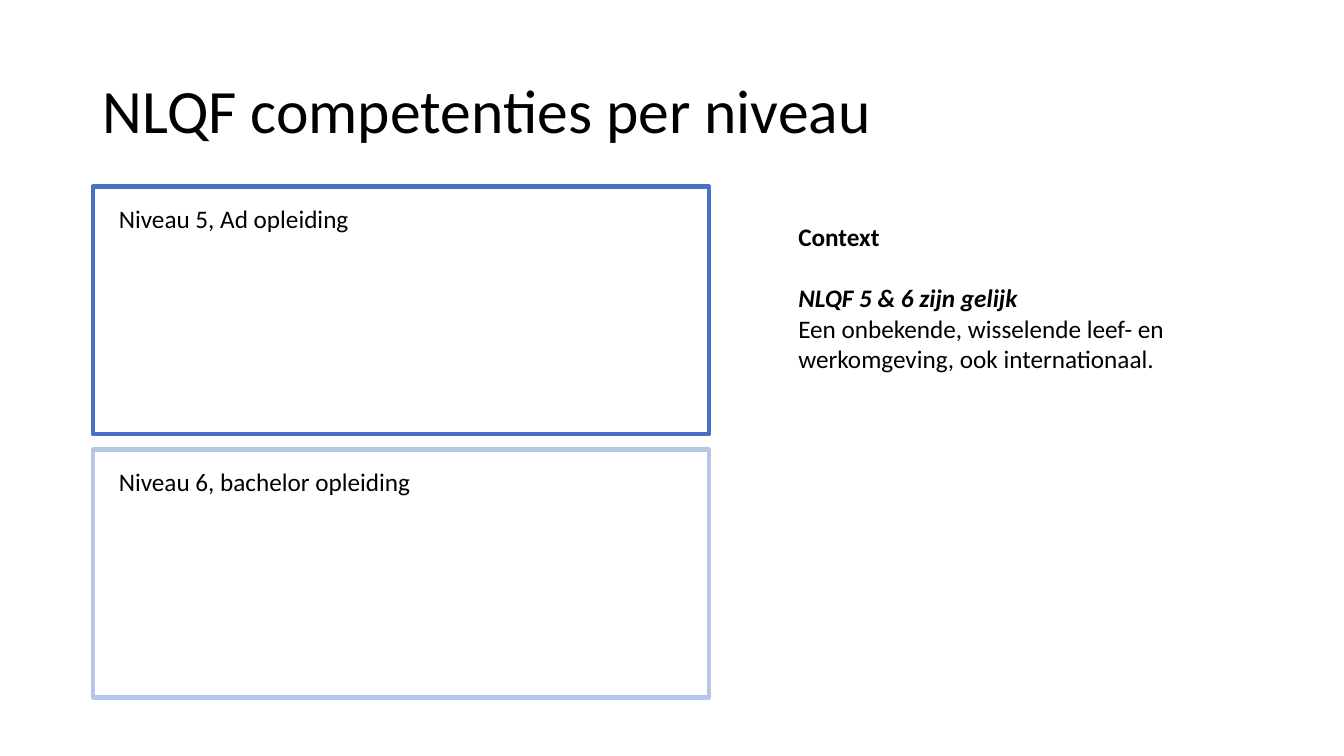
from pptx import Presentation
from pptx.dml.color import RGBColor as RGB
from pptx.enum.shapes import MSO_SHAPE as Shape
from pptx.enum.text import MSO_ANCHOR as Anchor, MSO_AUTO_SIZE as Fit, PP_ALIGN as Align
from pptx.util import Inches, Pt

WIDE, HIGH = Inches(13.33), Inches(7.5)
COLORS = {"ink": "000000", "blue": "4472C4", "pale": "B4C7E7"}
LEFT, TOP, STEP = 6.9, 24.67, 34.8
LEVELS = [
    ("Niveau 5, Ad opleiding", "blue", 21.08),
    ("Niveau 6, bachelor opleiding", "pale", 24.23),
]
CONTEXT = [
    ("Context", True, False, 0),
    ("NLQF 5 & 6 zijn gelijk", True, True, 22),
    ("Een onbekende, wisselende leef- en werkomgeving, ook internationaal.", False, False, 0),
]


def color(name):
    return RGB.from_string(COLORS[name])


def area(x, y, w, h):
    return [int(part * full / 100) for part, full in zip((x, y, w, h), (WIDE, HIGH) * 2)]


def style(para, size, bold=False, italic=False):
    para.alignment = Align.LEFT
    for run in para.runs:
        font = run.font
        font.name, font.size = "Calibri", Pt(size)
        font.bold, font.italic = bold, italic
        font.color.rgb = color("ink")


def add_title(slide, text):
    title = slide.shapes.title
    title.left, title.top, title.width, title.height = area(LEFT, 5.33, 86.25, 19.33)
    frame = title.text_frame
    frame.text = text
    frame.auto_size = Fit.NONE
    frame.vertical_anchor = Anchor.MIDDLE
    para = frame.paragraphs[0]
    para.line_spacing = 0.9
    style(para, 44)


def add_frame(slide, top, tone):
    box = slide.shapes.add_shape(Shape.RECTANGLE, *area(LEFT, top, 45.83, 32.8))
    box.shadow.inherit = False
    box.fill.background()
    box.line.color.rgb = color(tone)
    box.line.width = Pt(3)


def add_text(slide, place, lines):
    frame = slide.shapes.add_textbox(*area(*place)).text_frame
    frame.word_wrap = True
    for row, (text, bold, italic, gap) in enumerate(lines):
        para = frame.add_paragraph() if row else frame.paragraphs[0]
        para.text = text
        if gap:
            para.space_before = Pt(gap)
        style(para, 18, bold, italic)


def main():
    deck = Presentation()
    deck.slide_width, deck.slide_height = WIDE, HIGH
    slide = deck.slides.add_slide(deck.slide_layouts[5])
    add_title(slide, "NLQF competenties per niveau")
    for row, (text, tone, width) in enumerate(LEVELS):
        top = TOP + row * STEP
        add_frame(slide, top, tone)
        add_text(slide, (8.1, top + 1.6, width, 5.33), [(text, False, False, 0)])
    add_text(slide, (58.66, 28.67, 34.5, 29.6), CONTEXT)
    deck.save("out.pptx")


if __name__ == "__main__":
    main()
